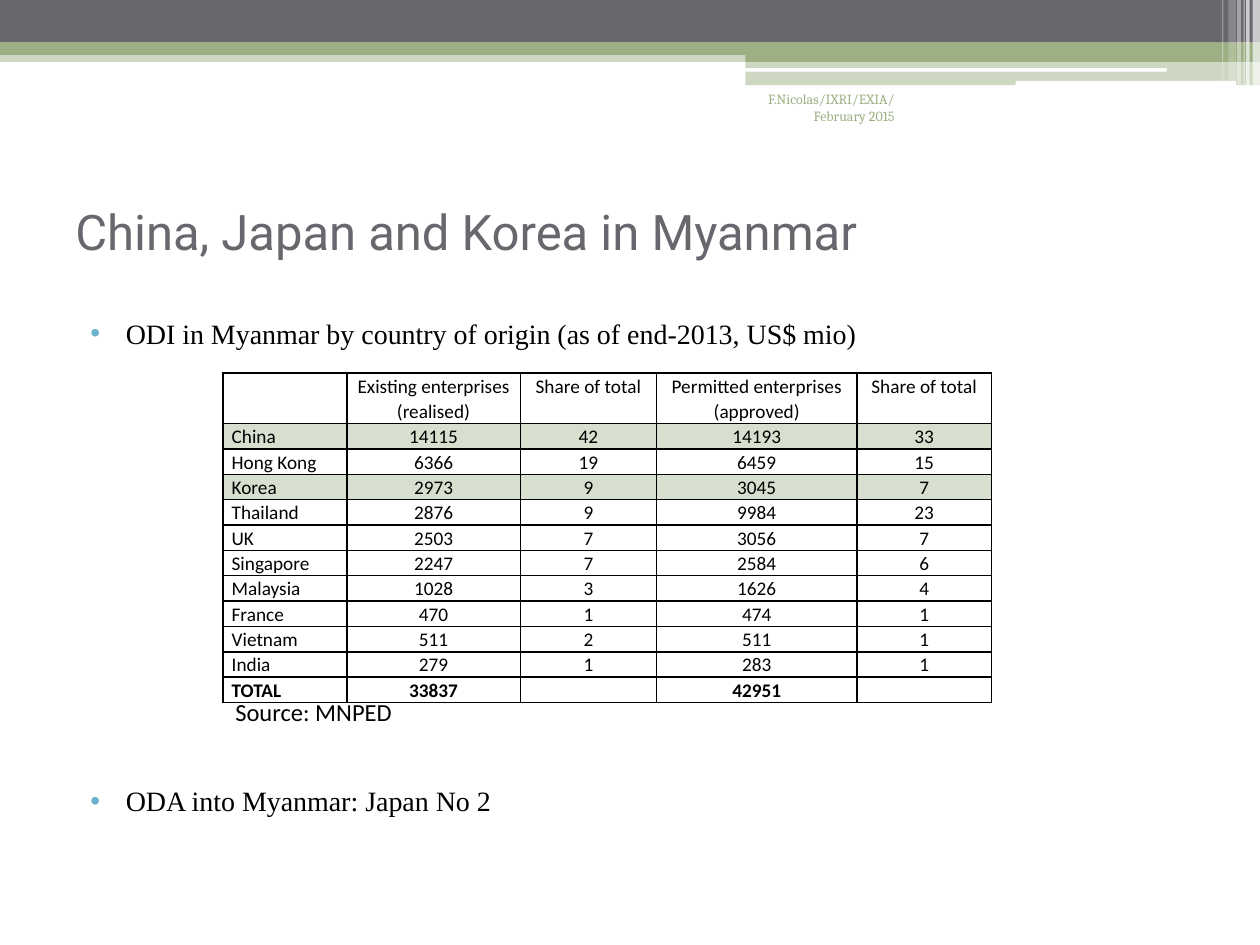
from dataclasses import dataclass

from lxml import etree
from pptx import Presentation
from pptx.dml.color import RGBColor
from pptx.enum.shapes import MSO_SHAPE as Preset
from pptx.enum.text import MSO_ANCHOR as Anchor, PP_ALIGN as Align
from pptx.oxml.ns import qn
from pptx.util import Pt


@dataclass(frozen=True)
class Theme:
    slate: str = "69676D"
    sage: str = "9CB084"
    pale_sage: str = "D7DFCE"
    sky: str = "6BB1C9"
    black: str = "000000"
    white: str = "FFFFFF"
    title: int = 28
    body: int = 16
    source: int = 14
    cell: int = 11
    credit: int = 8


theme = Theme()


def add_span(para, text, font, size, color, bold=False):
    span = para.add_run()
    span.text = text
    span.font.name = font
    span.font.size = Pt(size)
    span.font.bold = bold
    span.font.color.rgb = RGBColor.from_string(color)


def add_box(left, top, width, height):
    """Add a wrapping text box and return its text frame."""
    box = page.shapes.add_textbox(Pt(left), Pt(top), Pt(width), Pt(height))
    box.text_frame.word_wrap = True
    return box.text_frame


deck = Presentation()
deck.slide_width, deck.slide_height = Pt(720), Pt(540)
page = deck.slides.add_slide(deck.slide_layouts[6])

# Header bands, back to front: left, top, width, height, colour, opacity %
rect, rounded = Preset.RECTANGLE, Preset.ROUNDED_RECTANGLE
bands = [
    (rect, 0, 28.8, 720, 6.6, theme.sage, 50),
    (rect, 0, 0, 720, 24.4, theme.slate, 100),
    (rect, 0, 24.2, 720, 7.2, theme.sage, 100),
    (rect, 426, 28.2, 294, 7.2, theme.sage, 100),
    (rect, 426, 34.7, 294, 14, theme.sage, 50),
    (rounded, 425.5, 38.9, 241.2, 2.1, theme.white, 100),
    (rounded, 580.4, 46.2, 126, 2.8, theme.white, 100),
    (rect, 715.8, 0, 4.2, 48.8, theme.white, 65),
    (rect, 712.1, 0, 2.1, 48.8, theme.white, 65),
    (rect, 710.6, 0, 0.7, 48.8, theme.white, 60),
    (rect, 707, 0, 2.1, 48.8, theme.white, 40),
    (rect, 702, 0, 4.3, 46.1, theme.white, 20),
    (rect, 698.4, 0, 0.7, 46.1, theme.white, 30),
]
for preset, left, top, width, height, color, opacity in bands:
    band = page.shapes.add_shape(preset, Pt(left), Pt(top), Pt(width), Pt(height))
    band.shadow.inherit = False
    band.line.fill.background()
    band.fill.solid()
    band.fill.fore_color.rgb = RGBColor.from_string(color)
    if opacity < 100:
        tint = band.fill._xPr.find(".//" + qn("a:srgbClr"))
        etree.SubElement(tint, qn("a:alpha"), val=str(opacity * 1000))

title = add_box(36, 90, 648, 84.2)
title.vertical_anchor = Anchor.MIDDLE
add_span(title.paragraphs[0], "China, Japan and Korea in Myanmar",
         "Roboto", theme.title, theme.slate)

# Two bullets, spaced apart to leave room for the table
body = add_box(36, 177.1, 648, 340.6)
bullets = [
    ("ODI in Myanmar by country of origin (as of end-2013, US$ mio)", 3),
    ("ODA into Myanmar: Japan No 2", 248),
]
for index, (text, gap) in enumerate(bullets):
    para = body.add_paragraph() if index else body.paragraphs[0]
    para.space_before = Pt(gap)
    props = para._p.get_or_add_pPr()
    props.set("marL", str(Pt(28.8)))
    props.set("indent", str(-Pt(20.2)))
    bullet_color = etree.SubElement(props, qn("a:buClr"))
    etree.SubElement(bullet_color, qn("a:srgbClr"), val=theme.sky)
    etree.SubElement(props, qn("a:buFont"), typeface="Arial")
    etree.SubElement(props, qn("a:buChar"), char="•")
    add_span(para, text, "Times New Roman", theme.body, theme.black)

credit = add_box(414, 48.2, 104.4, 36).paragraphs[0]
credit.alignment = Align.RIGHT
add_span(credit, "F.Nicolas/IXRI/EXIA/ February 2015", "Cambria", theme.credit, theme.sage)

# Investment table
rows = [
    ("", "Existing enterprises (realised)", "Share of total",
     "Permitted enterprises (approved)", "Share of total"),
    ("China", "14115", "42", "14193", "33"),
    ("Hong Kong", "6366", "19", "6459", "15"),
    ("Korea", "2973", "9", "3045", "7"),
    ("Thailand", "2876", "9", "9984", "23"),
    ("UK", "2503", "7", "3056", "7"),
    ("Singapore", "2247", "7", "2584", "6"),
    ("Malaysia", "1028", "3", "1626", "4"),
    ("France", "470", "1", "474", "1"),
    ("Vietnam", "511", "2", "511", "1"),
    ("India", "279", "1", "283", "1"),
    ("TOTAL", "33837", "", "42951", ""),
]
column_widths = [70.8, 99.2, 77.8, 114.6, 76.8]
header_height, row_height = 28.9, 14.5
highlighted = {"China", "Korea"}

table = page.shapes.add_table(
    len(rows), len(column_widths), Pt(127.4), Pt(213.2), Pt(sum(column_widths)),
    Pt(header_height + row_height * (len(rows) - 1))).table
table.first_row = table.horz_banding = False
for column, width in zip(table.columns, column_widths):
    column.width = Pt(width)

for row_index, values in enumerate(rows):
    table.rows[row_index].height = Pt(row_height if row_index else header_height)
    for column_index, text in enumerate(values):
        cell = table.cell(row_index, column_index)
        cell.margin_left = cell.margin_right = Pt(5)
        cell.margin_top = cell.margin_bottom = 0
        para = cell.text_frame.paragraphs[0]
        para.line_spacing = 1.07
        para.alignment = Align.CENTER if column_index else Align.LEFT
        if text:
            add_span(para, text, "Calibri", theme.cell, theme.black,
                     bold=values[0] == "TOTAL")
        else:
            etree.SubElement(para._p, qn("a:endParaRPr"), sz=str(theme.cell * 100))
        props = cell._tc.get_or_add_tcPr()
        for side in ("lnL", "lnR", "lnT", "lnB"):
            border = etree.SubElement(props, qn(f"a:{side}"), w=str(Pt(1)))
            stroke = etree.SubElement(border, qn("a:solidFill"))
            etree.SubElement(stroke, qn("a:srgbClr"), val=theme.black)
        if values[0] in highlighted:
            cell.fill.solid()
            cell.fill.fore_color.rgb = RGBColor.from_string(theme.pale_sage)
        else:
            cell.fill.background()

source = add_box(127.4, 394.6, 193, 24.5).paragraphs[0]
add_span(source, "Source: MNPED", "Calibri", theme.source, theme.black)

deck.save("out.pptx")
